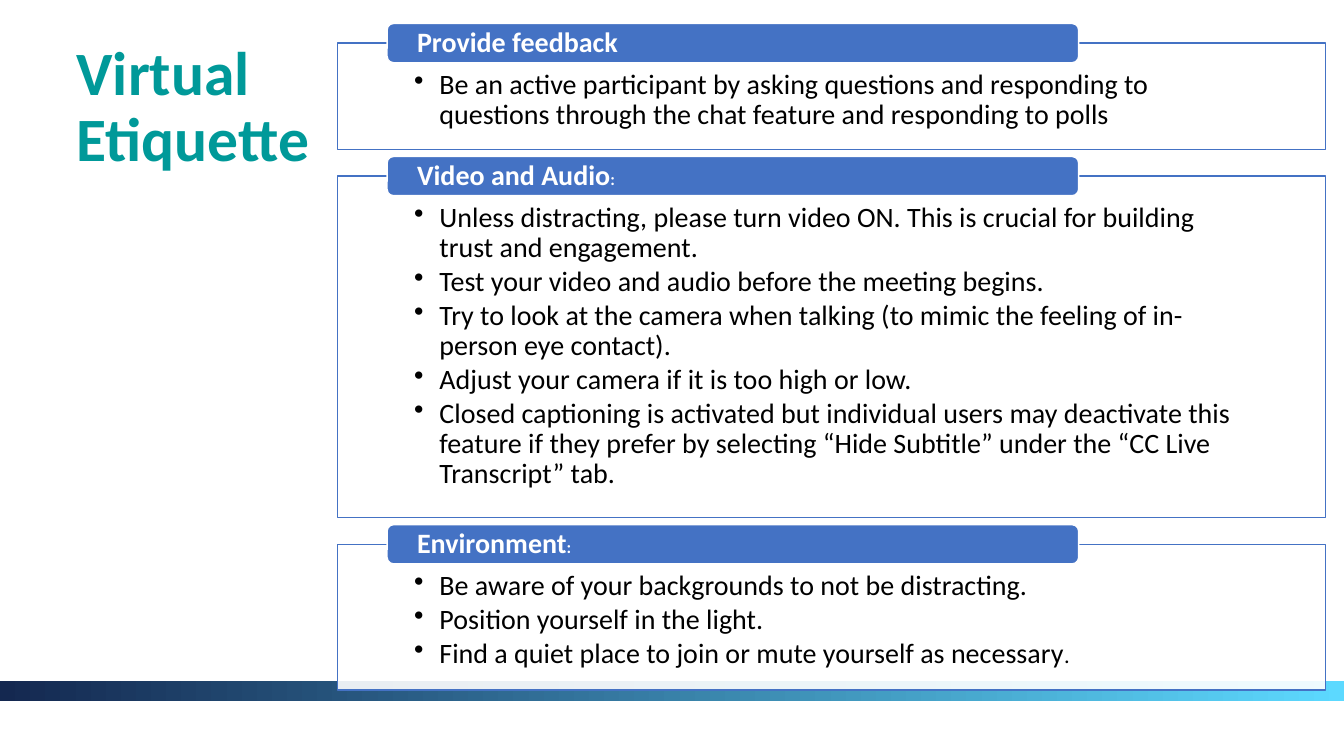
from dataclasses import dataclass

from lxml import etree
from pptx import Presentation
from pptx.dml.color import RGBColor
from pptx.enum import shapes, text
from pptx.oxml import ns
from pptx.util import Length, Pt

TEAL = RGBColor(0x00, 0x99, 0x99)
BLUE = RGBColor(0x44, 0x72, 0xC4)
NAVY = RGBColor(0x14, 0x28, 0x50)
SKY = RGBColor(0x5C, 0xD9, 0xFF)
WHITE = RGBColor(0xFF, 0xFF, 0xFF)
BLACK = RGBColor(0x00, 0x00, 0x00)

FONT = "Calibri"
FRAME_LEFT, FRAME_WIDTH = Pt(241.2), Pt(705.6)
FIRST_TOP, GAP = Pt(30.8), Pt(19)
HEADER_LEFT, HEADER_WIDTH, HEADER_HEIGHT = Pt(276.5), Pt(494), Pt(28)
HEADER_RISE = Pt(14)
INDENT = Pt(18)


@dataclass
class Ending:
    """Closing punctuation set smaller than the text before it."""
    mark: str
    size: Length


@dataclass
class Section:
    heading: str
    points: list[str]
    height: Length
    heading_end: Ending | None = None
    points_end: Ending | None = None


SECTIONS = [
    Section("Provide feedback", [
        "Be an active participant by asking questions and responding to "
        "questions through the chat feature and responding to polls",
    ], Pt(76)),
    Section("Video and Audio", [
        "Unless distracting, please turn video ON. This is crucial for "
        "building trust and engagement.",
        "Test your video and audio before the meeting begins.",
        "Try to look at the camera when talking (to mimic the feeling of "
        "in-person eye contact).",
        "Adjust your camera if it is too high or low.",
        "Closed captioning is activated but individual users may deactivate "
        "this feature if they prefer by selecting “Hide Subtitle” under the "
        "“CC Live Transcript” tab.",
    ], Pt(244), heading_end=Ending(":", Pt(12))),
    Section("Environment", [
        "Be aware of your backgrounds to not be distracting.",
        "Position yourself in the light.",
        "Find a quiet place to join or mute yourself as necessary",
    ], Pt(104), heading_end=Ending(":", Pt(12)),
        points_end=Ending(".", Pt(16))),
]


def add_box(s, kind, left: Length, top: Length, width: Length,
            height: Length, fill: RGBColor, line: RGBColor):
    sp = s.shapes.add_shape(kind, left, top, width, height)
    sp.shadow.inherit = False
    sp.fill.solid()
    sp.fill.fore_color.rgb = fill
    sp.line.color.rgb = line
    sp.line.width = Pt(1)
    return sp


def set_margins(tf, side: Length, top: Length, bottom: Length) -> None:
    tf.margin_left = tf.margin_right = side
    tf.margin_top, tf.margin_bottom = top, bottom
    tf.word_wrap = True


def write(p, words: str, size: Length, color: RGBColor, bold: bool,
          ending: Ending | None = None) -> None:
    """Fill a left-aligned paragraph, with an optional smaller ending."""
    p.alignment = text.PP_ALIGN.LEFT
    p.line_spacing = 0.9
    p.font.name, p.font.size, p.font.bold = FONT, size, bold
    p.font.color.rgb = color
    p.add_run().text = words
    if ending:
        r = p.add_run()
        r.text = ending.mark
        r.font.size = ending.size


def add_bullet(p) -> None:
    pPr = p._p.get_or_add_pPr()
    pPr.set("marL", str(INDENT))
    pPr.set("indent", str(-INDENT))
    bullet = etree.Element(ns.qn("a:buChar"), char="•")
    pPr.find(ns.qn("a:defRPr")).addprevious(bullet)


def add_frame(s, section: Section, top: Length) -> None:
    sp = add_box(s, shapes.MSO_SHAPE.RECTANGLE, FRAME_LEFT, top,
                 FRAME_WIDTH, section.height, WHITE, BLUE)
    color = sp.fill._xPr.find(".//" + ns.qn("a:srgbClr"))
    etree.SubElement(color, ns.qn("a:alpha"), val="90000")
    tf = sp.text_frame
    set_margins(tf, Pt(54.7), Pt(19.4), Pt(11.5))
    tf.vertical_anchor = text.MSO_ANCHOR.TOP
    last = len(section.points) - 1
    for i, point in enumerate(section.points):
        p = tf.add_paragraph() if i else tf.paragraphs[0]
        write(p, point, Pt(20), BLACK, False,
              section.points_end if i == last else None)
        p.space_after = Pt(2.6)
        add_bullet(p)


def add_header(s, section: Section, frame_top: Length) -> None:
    sp = add_box(s, shapes.MSO_SHAPE.ROUNDED_RECTANGLE, HEADER_LEFT,
                 frame_top - HEADER_RISE, HEADER_WIDTH, HEADER_HEIGHT,
                 BLUE, WHITE)
    tf = sp.text_frame
    set_margins(tf, Pt(20), Pt(0), Pt(0))
    tf.vertical_anchor = text.MSO_ANCHOR.MIDDLE
    write(tf.paragraphs[0], section.heading, Pt(20), WHITE, True,
          section.heading_end)


def add_gradient_band(s, width: Length) -> None:
    sp = s.shapes.add_shape(shapes.MSO_SHAPE.RECTANGLE, 0, Pt(486.5),
                            width, Pt(14))
    sp.shadow.inherit = False
    sp.line.fill.background()
    sp.fill.gradient()
    sp.fill.gradient_angle = 0
    for stop, color in zip(sp.fill.gradient_stops, (NAVY, SKY)):
        stop.color.rgb = color


def set_title(s) -> None:
    title = s.shapes.title
    title.left, title.top = Pt(47.5), Pt(26.6)
    title.width, title.height = Pt(210), Pt(202)
    tf = title.text_frame
    tf.word_wrap = True
    tf.auto_size = text.MSO_AUTO_SIZE.NONE
    tf.vertical_anchor = text.MSO_ANCHOR.TOP
    write(tf.paragraphs[0], "Virtual Etiquette", Pt(44), TEAL, True)


def main() -> None:
    prs = Presentation()
    prs.slide_width, prs.slide_height = Pt(960), Pt(540)
    s = prs.slides.add_slide(prs.slide_layouts.get_by_name("Title Only"))
    set_title(s)
    add_gradient_band(s, prs.slide_width)
    top = FIRST_TOP
    for section in SECTIONS:
        add_frame(s, section, top)
        add_header(s, section, top)
        top += section.height + GAP
    prs.save("out.pptx")


if __name__ == "__main__":
    main()
